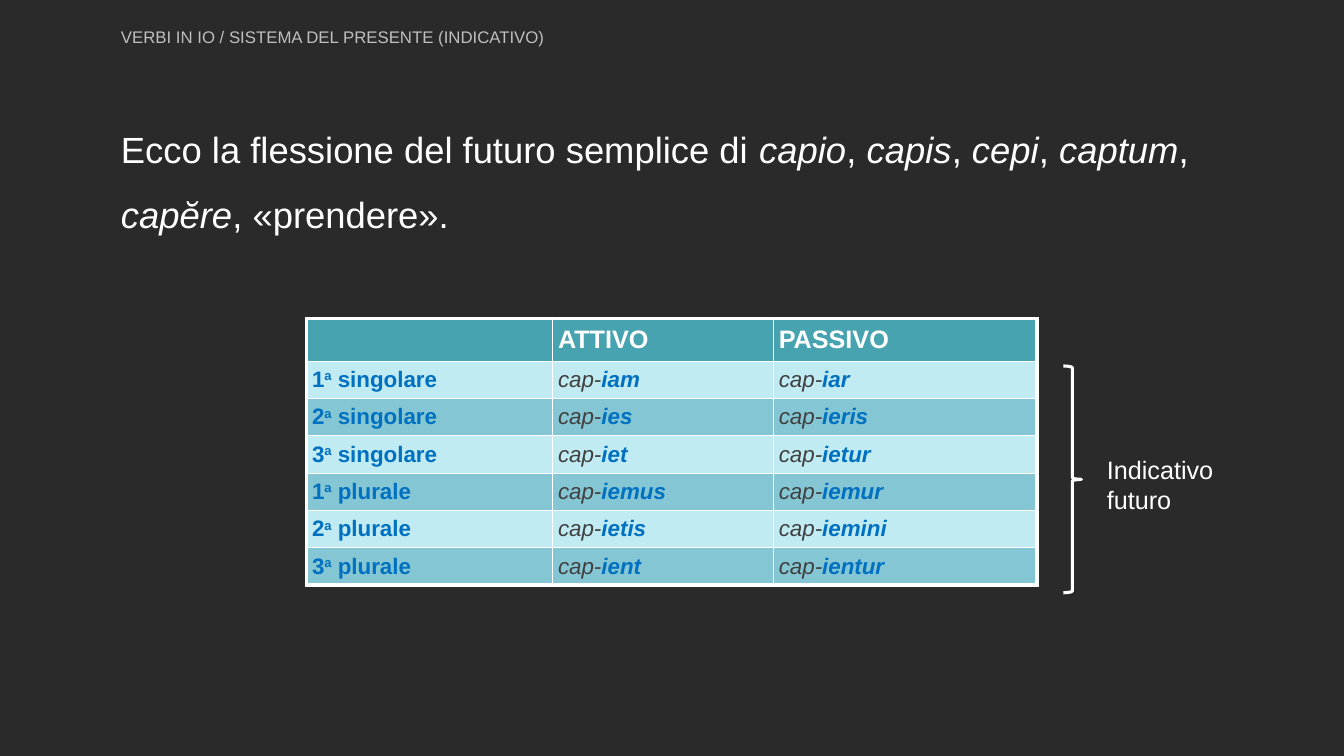
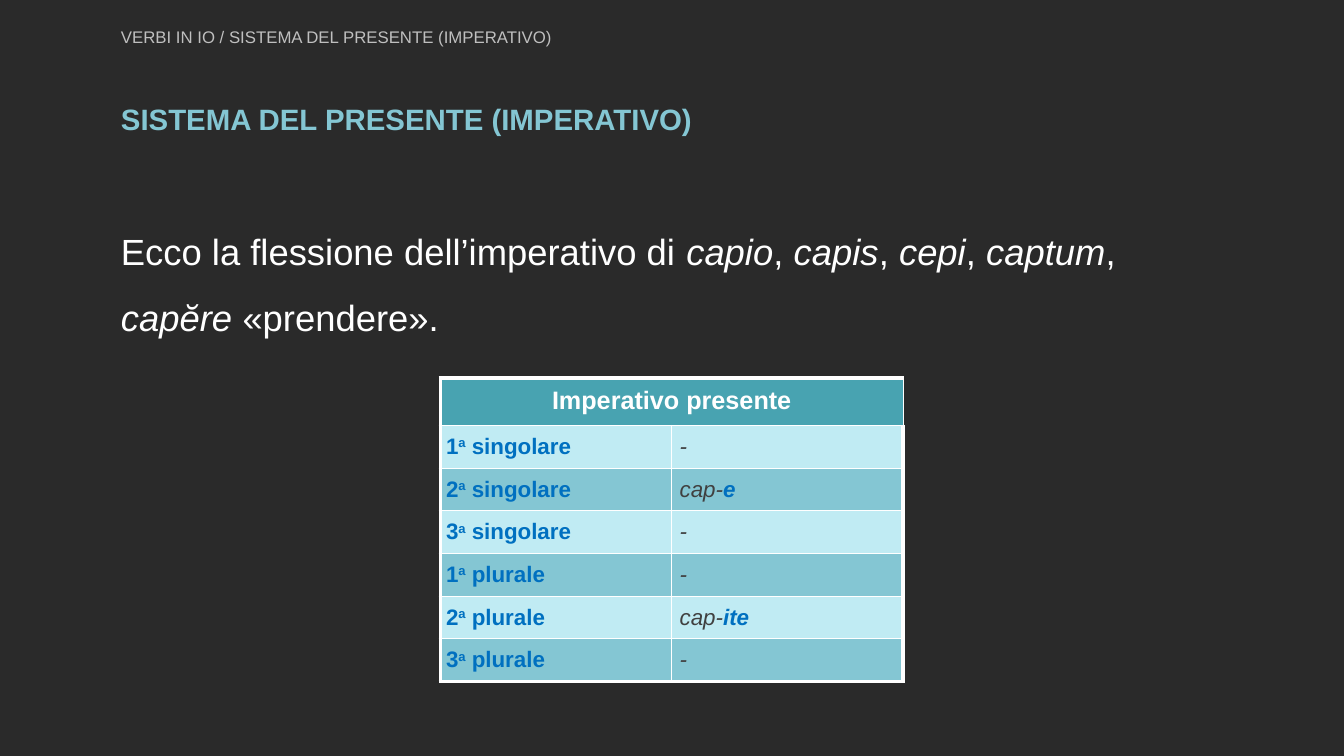
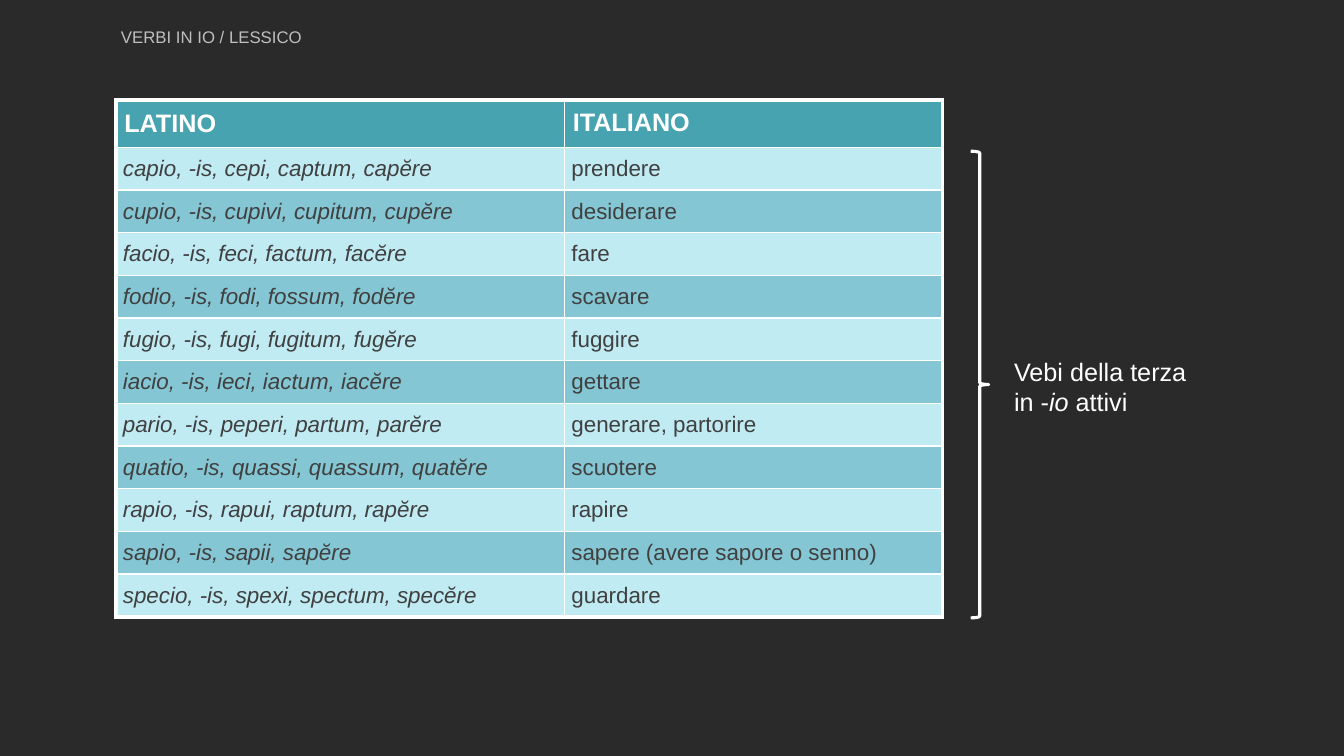
"""Build three Latin grammar slides on the verbs in -io."""
import pptx
import pptx.dml.color
import pptx.enum.shapes
import pptx.enum.text
import pptx.oxml
import pptx.oxml.ns
import pptx.util

Pt = pptx.util.Pt
RGBColor = pptx.dml.color.RGBColor
Anchor = pptx.enum.text.MSO_ANCHOR
Align = pptx.enum.text.PP_ALIGN

DARK = RGBColor(0x2A, 0x2A, 0x2A)
WHITE = RGBColor(0xFF, 0xFF, 0xFF)
SILVER = RGBColor(0xBF, 0xBF, 0xBF)
GREY = RGBColor(0x40, 0x40, 0x40)
BLUE = RGBColor(0x00, 0x70, 0xC0)
TEAL = RGBColor(0x48, 0xA3, 0xB1)
SKY = RGBColor(0x84, 0xC6, 0xD3)
PALE = RGBColor(0xC0, 0xEB, 0xF3)

FONT = "Arial"
LEFT, TOP, WIDTH = 82.8, 71.3, 793.4
LAYOUTS = {0: 5, 1: 1, 2: 3}
PERSONS = [(digit, number) for number in ("singolare", "plurale") for digit in "123"]


def slanted(text):
    """Split text into spans, with the parts between asterisks in italics."""
    return [(part, {"italic": True} if index % 2 else {})
            for index, part in enumerate(text.split("*")) if part]


def person(digit, number):
    """Return the spans and style of a row label such as 1a singolare."""
    return [(digit, {}), ("a", {"raised": True}), (" " + number, {})], {"color": BLUE, "bold": True}


def form(ending):
    """Return the spans and style of a verb form, or of a dash if it is missing."""
    if not ending:
        return [("-", {})], {"italic": True}
    return [("cap-", {}), (ending, {"bold": True, "color": BLUE})], {"italic": True}


def set_font(font, size=None, color=None, bold=None, italic=None):
    """Apply the given traits to a font."""
    if size:
        font.size = Pt(size)
        font.name = FONT
    if color is not None:
        font.color.rgb = color
    if bold is not None:
        font.bold = bold
    if italic is not None:
        font.italic = italic


class Lesson:
    """Hold the deck, its style and the current page."""

    def __init__(self):
        """Start a dark widescreen deck."""
        self.deck = pptx.Presentation()
        self.deck.slide_width, self.deck.slide_height = Pt(960), Pt(540)
        fill = self.deck.slide_master.background.fill
        fill.solid()
        fill.fore_color.rgb = DARK

    def add_page(self, header, bodies=0):
        """Add a page with its running header and a number of body texts."""
        layout = self.deck.slide_layouts[LAYOUTS[bodies]]
        self.page = self.deck.slides.add_slide(layout)
        self.bodies = iter(list(self.page.placeholders)[1:])
        self.fill_box(self.page.shapes.title, (LEFT, 15.8, 538.6, 21.6),
                      [(header, {})], 12, SILVER, Anchor.MIDDLE)

    def fill_box(self, box, place, spans, size, color, anchor=Anchor.TOP, spacing=1.0, bold=False):
        """Place a box and set one paragraph in it."""
        box.left, box.top, box.width, box.height = map(Pt, place)
        frame = box.text_frame
        frame.word_wrap = True
        frame.auto_size = pptx.enum.text.MSO_AUTO_SIZE.NONE
        frame.vertical_anchor = anchor
        frame.margin_left = frame.margin_right = Pt(3.6)
        frame.margin_top = frame.margin_bottom = Pt(3.6)
        self.set_text(frame, spans, spacing=spacing, size=size, color=color, bold=bold)

    def set_text(self, frame, spans, align=Align.LEFT, spacing=1.0, **style):
        """Set spans in the first paragraph of a frame."""
        para = frame.paragraphs[0]
        para.alignment = align
        para.line_spacing = spacing
        para.space_before = Pt(0)
        properties = para._p.get_or_add_pPr()
        properties.set("marL", "0")
        properties.set("indent", "0")
        properties.append(pptx.oxml.parse_xml(f"<a:buNone {pptx.oxml.ns.nsdecls('a')}/>"))
        set_font(para.font, **style)
        for text, traits in spans:
            span = para.add_run()
            span.text = text
            if "raised" in traits:
                span._r.get_or_add_rPr().set("baseline", "30000")
            else:
                set_font(span.font, **traits)

    def lead(self, text, top=TOP):
        """Set the opening sentence in the next body placeholder."""
        self.fill_box(next(self.bodies), (LEFT, top, WIDTH, 91.4), slanted(text), 26, WHITE, spacing=1.5)

    def heading(self, text):
        """Set a section heading in the next body placeholder."""
        self.fill_box(next(self.bodies), (LEFT, TOP, WIDTH, 30.2), [(text, {})], 21, SKY,
                      spacing=0.9, bold=True)

    def note(self, text, left, top, width):
        """Set the remark beside a brace."""
        box = self.page.shapes.add_textbox(0, 0, 0, 0)
        self.fill_box(box, (left, top, width, 51), slanted(text), 18, WHITE)

    def brace(self, left, top, height):
        """Draw a right brace."""
        kind = pptx.enum.shapes.MSO_SHAPE.RIGHT_BRACE
        brace = self.page.shapes.add_shape(kind, Pt(left), Pt(top), Pt(12.8), Pt(height))
        brace.shadow.inherit = False
        brace.fill.background()
        brace.line.color.rgb = WHITE
        brace.line.width = Pt(2.25)
        brace.adjustments[0] = 0.1

    def table(self, place, columns, heights, header, rows, header_inset, insets, anchors, align=Align.LEFT):
        """Draw a banded table under a header; a short header spans the columns."""
        header_height, row_height = heights
        total = header_height + row_height * len(rows)
        grid = self.page.shapes.add_table(len(rows) + 1, len(columns), *map(Pt, place),
                                          Pt(sum(columns)), Pt(total)).table
        grid.first_row = grid.horz_banding = False
        for column, width in zip(grid.columns, columns):
            column.width = Pt(width)
        for index, row in enumerate(grid.rows):
            row.height = Pt(row_height if index else header_height)
        if len(header) < len(columns):
            grid.cell(0, 0).merge(grid.cell(0, len(columns) - 1))
        for column in range(len(columns)):
            cell = grid.cell(0, column)
            self.paint(cell, TEAL, header_inset, anchors[column])
            self.rule(cell, column == 0, column == len(columns) - 1, True, False)
        for column, text in enumerate(header):
            spans = [(text, {})] if text else []
            self.set_text(grid.cell(0, column).text_frame, spans, align, size=18, color=WHITE, bold=True)
        for index, entries in enumerate(rows, 1):
            for column, (spans, style) in enumerate(entries):
                cell = grid.cell(index, column)
                self.paint(cell, PALE if index % 2 else SKY, insets[column], Anchor.MIDDLE)
                self.rule(cell, column == 0, column == len(columns) - 1, False, index == len(rows))
                self.set_text(cell.text_frame, spans, **{"size": 16, "color": GREY, "bold": False, **style})

    def paint(self, cell, color, inset, anchor):
        """Set the fill, margins and anchor of a cell."""
        cell.fill.solid()
        cell.fill.fore_color.rgb = color
        cell.margin_left = cell.margin_right = Pt(inset)
        cell.margin_top = cell.margin_bottom = Pt(inset)
        cell.vertical_anchor = anchor

    def rule(self, cell, left, right, top, bottom):
        """Rule a cell in white, thick on the outer sides of the table."""
        properties = cell._tc.get_or_add_tcPr()
        for index, (side, outer) in enumerate(zip("LRTB", (left, right, top, bottom))):
            properties.insert(index, pptx.oxml.parse_xml(
                f"<a:ln{side} {pptx.oxml.ns.nsdecls('a')} w='{Pt(3 if outer else 1)}'>"
                f"<a:solidFill><a:srgbClr val='{WHITE}'/></a:solidFill></a:ln{side}>"))


def main():
    """Build the slides and save them."""
    lesson = Lesson()
    middle, top = Anchor.MIDDLE, Anchor.TOP

    lesson.add_page("VERBI IN IO / SISTEMA DEL PRESENTE (INDICATIVO)", 1)
    lesson.lead("Ecco la flessione del futuro semplice di *capio*, *capis*, *cepi*, *captum*, "
                "*capĕre*, «prendere».")
    active = ("iam", "ies", "iet", "iemus", "ietis", "ient")
    passive = ("iar", "ieris", "ietur", "iemur", "iemini", "ientur")
    future = [(person(*label), form(first), form(second))
              for label, first, second in zip(PERSONS, active, passive)]
    lesson.table((218.9, 227.5), (175.7, 157.7, 188.6), (30.5, 26.7), ("", "ATTIVO", "PASSIVO"),
                 future, 4, (4, 4, 4), (middle,) * 3)
    lesson.brace(759.6, 261.4, 162)
    lesson.note("Indicativo futuro", 787, 321, 90)

    lesson.add_page("VERBI IN IO / SISTEMA DEL PRESENTE (IMPERATIVO)", 2)
    lesson.heading("SISTEMA DEL PRESENTE (IMPERATIVO)")
    lesson.lead("Ecco la flessione dell’imperativo di *capio*, *capis*, *cepi*, *captum*, "
                "*capĕre* «prendere».", 144.8)
    imperative = [(person(*label), form(ending))
                  for label, ending in zip(PERSONS, ("", "e", "", "", "ite", ""))]
    lesson.table((314.6, 270), (164.9, 165.6), (34, 30.5), ("Imperativo presente",),
                 imperative, 6, (4, 6), (top, top), Align.CENTER)

    lesson.add_page("VERBI IN IO / LESSICO")
    lexicon = [
        ("capio, -is, cepi, captum, capĕre", "prendere"),
        ("cupio, -is, cupivi, cupitum, cupĕre", "desiderare"),
        ("facio, -is, feci, factum, facĕre", "fare"),
        ("fodio, -is, fodi, fossum, fodĕre", "scavare"),
        ("fugio, -is, fugi, fugitum, fugĕre", "fuggire"),
        ("iacio, -is, ieci, iactum, iacĕre", "gettare"),
        ("pario, -is, peperi, partum, parĕre", "generare, partorire"),
        ("quatio, -is, quassi, quassum, quatĕre", "scuotere"),
        ("rapio, -is, rapui, raptum, rapĕre", "rapire"),
        ("sapio, -is, sapii, sapĕre", "sapere (avere sapore o senno)"),
        ("specio, -is, spexi, spectum, specĕre", "guardare"),
    ]
    entries = [(([(latin, {})], {"italic": True}), ([(italian, {})], {})) for latin, italian in lexicon]
    lesson.table((LEFT, TOP), (320.4, 270), (34, 30.5), ("LATINO", "ITALIANO"),
                 entries, 6, (5, 5), (middle, top))
    lesson.brace(693.4, 108, 333.4)
    lesson.note("Vebi della terza in -*io* attivi", 720.7, 250.6, 147.6)

    lesson.deck.save("out.pptx")


if __name__ == "__main__":
    main()
